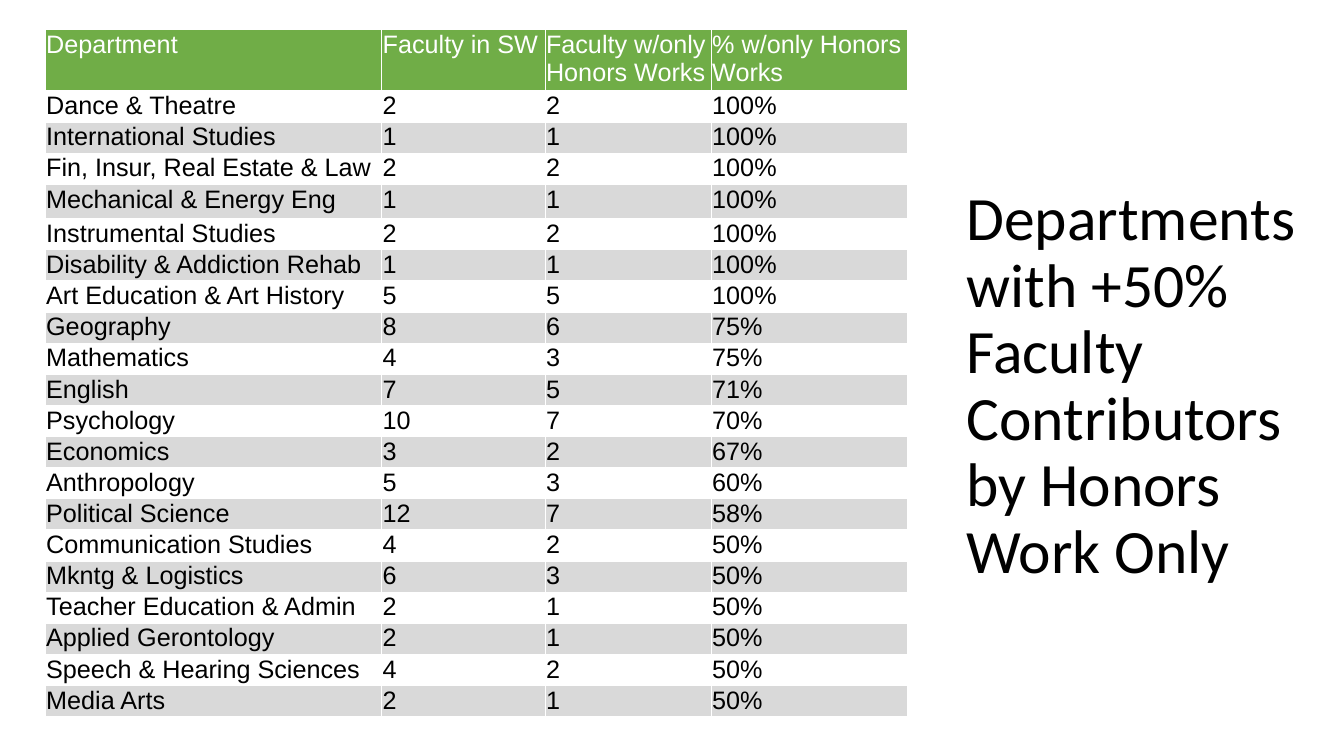
from dataclasses import dataclass

from lxml import etree
from pptx import Presentation
from pptx.dml.color import RGBColor
from pptx.enum import text
from pptx.oxml import ns
from pptx.util import Pt


@dataclass(frozen=True)
class Theme:
    header_fill: RGBColor = RGBColor(0x70, 0xAD, 0x47)
    band_fill: RGBColor = RGBColor(0xD9, 0xD9, 0xD9)
    header_ink: RGBColor = RGBColor(0xFF, 0xFF, 0xFF)
    ink: RGBColor = RGBColor(0, 0, 0)
    border: RGBColor = RGBColor(0xFF, 0xFF, 0xFF)
    title_font: str = "Calibri"
    table_font: str = "Arial"
    title_size: int = 44
    table_size: int = 18


@dataclass(frozen=True)
class Department:
    name: str
    faculty: int
    honors_only: int

    def cells(self) -> list[str]:
        share = self.honors_only / self.faculty
        return [self.name, str(self.faculty), str(self.honors_only), f"{share:.0%}"]


THEME = Theme()
TITLE = "Departments with +50% Faculty Contributors by Honors Work Only"
HEADINGS = ["Department", "Faculty in SW", "Faculty w/only Honors Works", "% w/only Honors Works"]
DEPARTMENTS = [
    Department("Dance & Theatre", 2, 2),
    Department("International Studies", 1, 1),
    Department("Fin, Insur, Real Estate & Law", 2, 2),
    Department("Mechanical & Energy Eng", 1, 1),
    Department("Instrumental Studies", 2, 2),
    Department("Disability & Addiction Rehab", 1, 1),
    Department("Art Education & Art History", 5, 5),
    Department("Geography", 8, 6),
    Department("Mathematics", 4, 3),
    Department("English", 7, 5),
    Department("Psychology", 10, 7),
    Department("Economics", 3, 2),
    Department("Anthropology", 5, 3),
    Department("Political Science", 12, 7),
    Department("Communication Studies", 4, 2),
    Department("Mkntg & Logistics", 6, 3),
    Department("Teacher Education & Admin", 2, 1),
    Department("Applied Gerontology", 2, 1),
    Department("Speech & Hearing Sciences", 4, 2),
    Department("Media Arts", 2, 1),
]
COLUMN_WIDTHS = [240.4, 116.7, 118.7, 140.4]
ROW_HEIGHT = 21.35
TALL_ROW, TALL_ROW_HEIGHT = 4, 24.6


def set_font(paragraph, name: str, size: int, color: RGBColor) -> None:
    for run in paragraph.runs:
        run.font.name = name
        run.font.size = Pt(size)
        run.font.color.rgb = color
        run.font.bold = False


def add_borders(cell) -> None:
    """Outline the cell; call before filling, as borders precede the fill in the XML."""
    properties = cell._tc.get_or_add_tcPr()
    for side in ("lnL", "lnR", "lnT", "lnB"):
        line = etree.SubElement(properties, ns.qn(f"a:{side}"), w=str(Pt(1)))
        fill = etree.SubElement(line, ns.qn("a:solidFill"))
        etree.SubElement(fill, ns.qn("a:srgbClr"), val=str(THEME.border))


def fill_cell(cell, label: str, row: int) -> None:
    cell.text_frame.text = label
    cell.margin_left = cell.margin_right = cell.margin_top = Pt(0.6)
    cell.margin_bottom = Pt(0)
    ink = THEME.header_ink if row == 0 else THEME.ink
    set_font(cell.text_frame.paragraphs[0], THEME.table_font, THEME.table_size, ink)
    add_borders(cell)
    if row % 2 and row > 0:
        cell.fill.background()
    else:
        cell.fill.solid()
        cell.fill.fore_color.rgb = THEME.band_fill if row else THEME.header_fill


def add_department_table(slide) -> None:
    rows = [HEADINGS] + [department.cells() for department in DEPARTMENTS]
    heights = [ROW_HEIGHT] * len(rows)
    heights[0] = 2 * ROW_HEIGHT
    heights[TALL_ROW] = TALL_ROW_HEIGHT
    table = slide.shapes.add_table(
        len(rows), len(HEADINGS), Pt(32.4), Pt(21.2), Pt(sum(COLUMN_WIDTHS)), Pt(sum(heights))
    ).table
    table.horz_banding = False
    for column, width in zip(table.columns, COLUMN_WIDTHS):
        column.width = Pt(width)
    for index, (labels, height) in enumerate(zip(rows, heights)):
        table.rows[index].height = Pt(height)
        for column_index, label in enumerate(labels):
            fill_cell(table.cell(index, column_index), label, index)


def add_title(slide) -> None:
    frame = slide.shapes.add_textbox(Pt(683.3), Pt(13), Pt(264.2), Pt(527)).text_frame
    frame.word_wrap = True
    frame.vertical_anchor = text.MSO_ANCHOR.MIDDLE
    frame.text = TITLE
    frame.paragraphs[0].line_spacing = 0.9
    set_font(frame.paragraphs[0], THEME.title_font, THEME.title_size, THEME.ink)


def main() -> None:
    presentation = Presentation()
    presentation.slide_width, presentation.slide_height = Pt(960), Pt(540)
    slide = presentation.slides.add_slide(presentation.slide_layouts[6])
    add_title(slide)
    add_department_table(slide)
    presentation.save("out.pptx")


if __name__ == "__main__":
    main()
